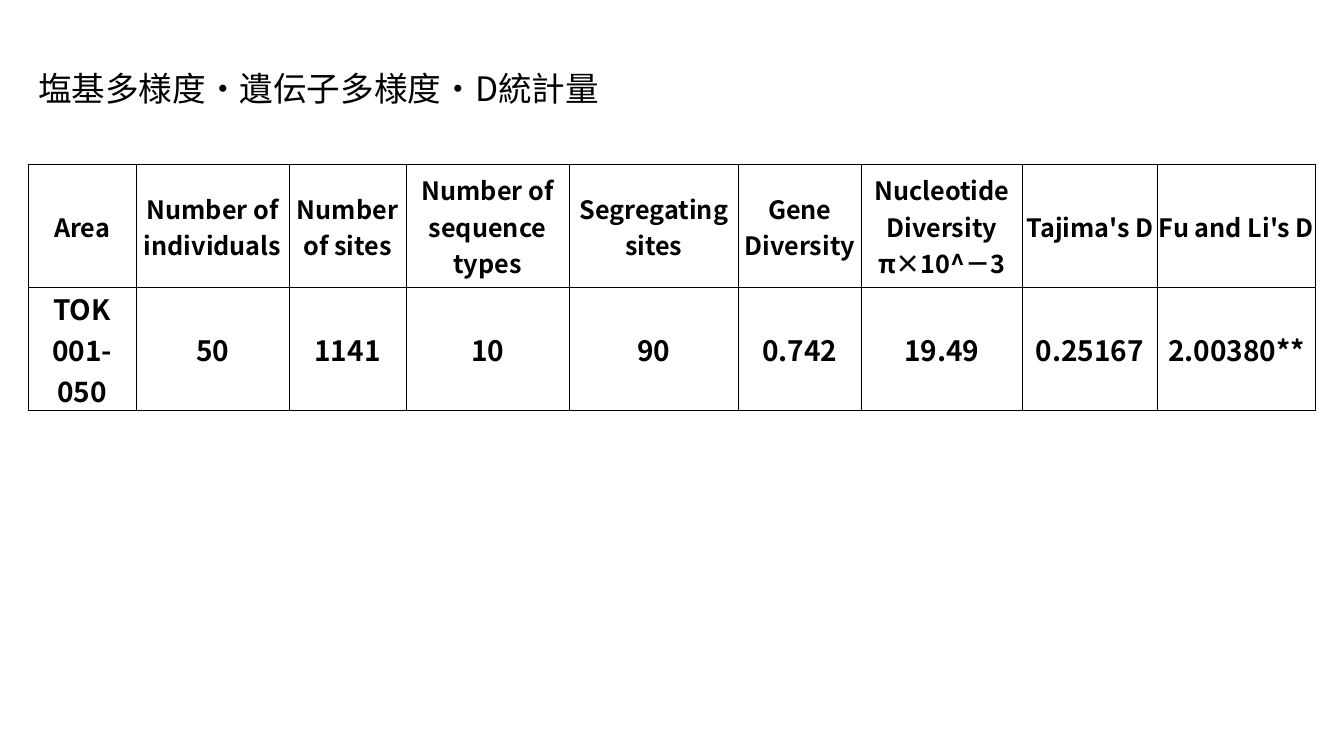
from lxml.etree import SubElement
from pptx import Presentation
from pptx.dml.color import RGBColor
from pptx.enum.text import MSO_ANCHOR, MSO_AUTO_SIZE, PP_ALIGN
from pptx.oxml.ns import qn
from pptx.util import Inches, Pt

COLORS = {"ink": "000000"}
FONT = "Noto Sans CJK JP"
TITLE = "塩基多様度・遺伝子多様度・D統計量"
COLUMNS = [
    ("Area", "TOK 001-050", 1.07),
    ("Number of individuals", "50", 1.52),
    ("Number of sites", "1141", 1.16),
    ("Number of sequence types", "10", 1.62),
    ("Segregating sites", "90", 1.68),
    ("Gene Diversity", "0.742", 1.22),
    ("Nucleotide Diversity π×10^－3", "19.49", 1.6),
    ("Tajima's D", "0.25167", 1.34),
    ("Fu and Li's D", "2.00380**", 1.57),
]
ROW_SIZES = (18, 20)


def write_text(frame, text, size, bold=False, align=PP_ALIGN.LEFT):
    """Write one paragraph, with the same font for Latin and Japanese."""
    para = frame.paragraphs[0]
    para.text = text
    para.alignment = align
    font = para.font
    font.name, font.size, font.bold = FONT, Pt(size), bold
    font.color.rgb = RGBColor.from_string(COLORS["ink"])
    properties = para._p.get_or_add_pPr().find(qn("a:defRPr"))
    SubElement(properties, qn("a:ea"), typeface=FONT)


def outline_cell(cell):
    """Draw a thin line on all four sides of a cell."""
    properties = cell._tc.get_or_add_tcPr()
    for side in ("lnL", "lnR", "lnT", "lnB"):
        line = SubElement(properties, qn(f"a:{side}"), w=str(Pt(0.5)))
        fill = SubElement(line, qn("a:solidFill"))
        SubElement(fill, qn("a:srgbClr"), val=COLORS["ink"])


def add_title(page, left, top, width, height):
    """Place the heading in the given box."""
    box = page.shapes.add_textbox(left, top, width, height)
    frame = box.text_frame
    frame.word_wrap = True
    frame.auto_size = MSO_AUTO_SIZE.SHAPE_TO_FIT_TEXT
    write_text(frame, TITLE, 24)


def add_diversity_table(page, left, top, width, height):
    """Fill the given box with the table of diversity statistics."""
    table = page.shapes.add_table(
        len(ROW_SIZES), len(COLUMNS), left, top, width, height
    ).table
    table.first_row = table.horz_banding = False
    total = sum(share for *_, share in COLUMNS)
    for column, (*texts, share) in enumerate(COLUMNS):
        table.columns[column].width = int(width * share / total)
        for row, (text, size) in enumerate(zip(texts, ROW_SIZES)):
            cell = table.cell(row, column)
            cell.margin_left = cell.margin_right = cell.margin_top = Inches(0.01)
            cell.margin_bottom = 0
            cell.vertical_anchor = MSO_ANCHOR.MIDDLE
            outline_cell(cell)
            cell.fill.background()
            write_text(cell.text_frame, text, size, True, PP_ALIGN.CENTER)


def main():
    """Build the slide and save the deck."""
    deck = Presentation()
    deck.slide_width, deck.slide_height = Inches(13.33), Inches(7.5)
    page = deck.slides.add_slide(deck.slide_layouts[6])
    left = Inches(0.28)
    add_title(page, left, Inches(0.62), Inches(5.84), Inches(0.5))
    add_diversity_table(page, left, Inches(1.63), Inches(12.77), Inches(2.44))
    deck.save("out.pptx")


if __name__ == "__main__":
    main()
